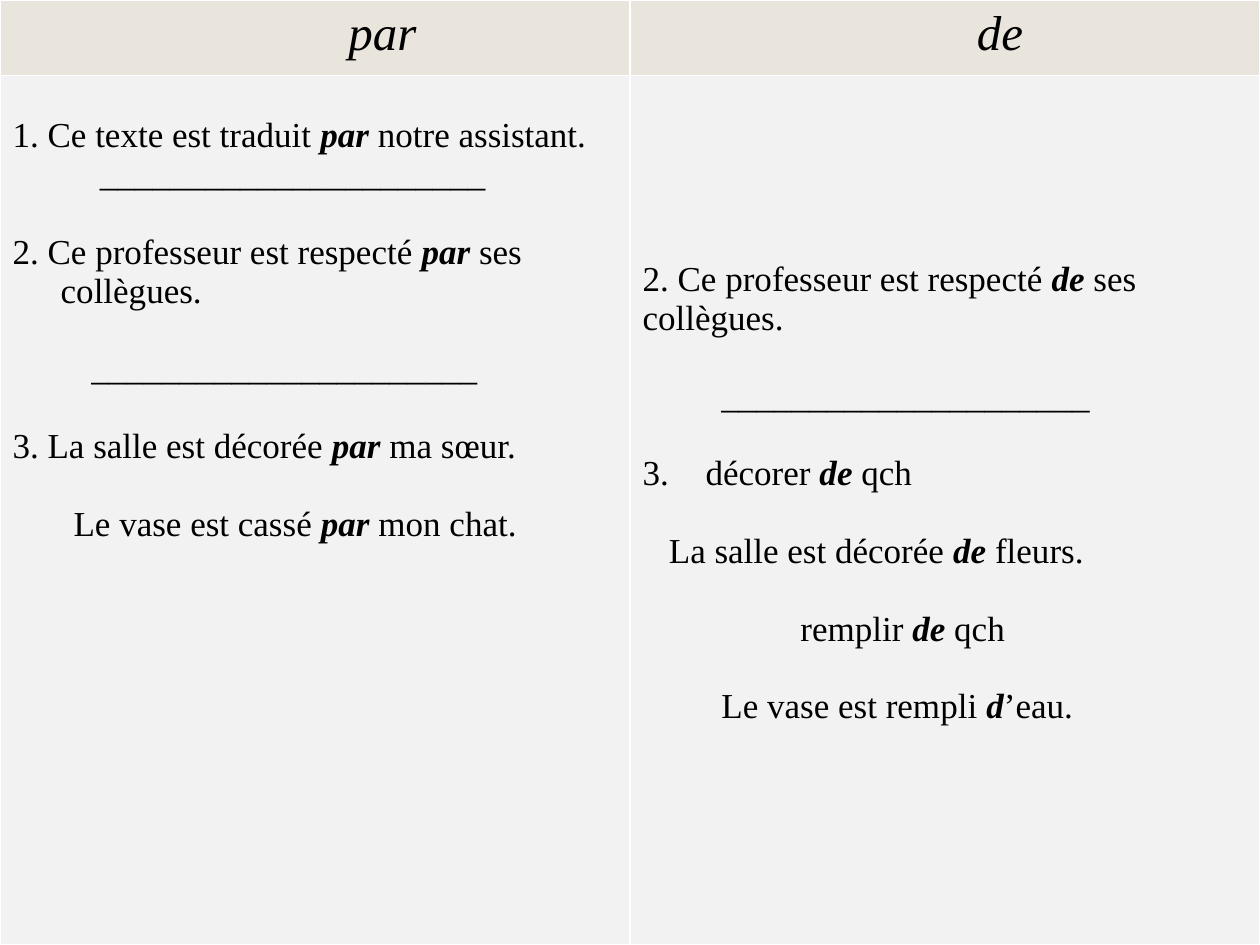
from dataclasses import dataclass

from lxml.etree import SubElement
from pptx import Presentation
from pptx.dml.color import RGBColor
from pptx.enum.text import MSO_ANCHOR, PP_ALIGN
from pptx.oxml.ns import qn
from pptx.util import Cm, Pt


@dataclass(frozen=True)
class Theme:
    font: str = "Times New Roman"
    text: str = "000000"
    header: str = "E9E5DC"
    body: str = "F2F2F2"
    border: str = "FFFFFF"
    border_width: float = 1
    header_size: float = 28
    body_size: float = 20
    gap: float = 22.2  # one line of body text


THEME = Theme()
HANG = 0.97  # hanging indent of the numbered sentences, cm

# Each line: left margin and first-line indent in cm, gap before, runs.
# Runs alternate between plain and emphasised text.
PAR_LINES = [
    (HANG, -HANG, False, ["1. Ce texte est traduit ", "par ", "notre assistant."]),
    (1.76, 0, False, ["_" * 22]),
    (HANG, -HANG, True, ["2. Ce professeur est respecté ", "par ", "ses collègues."]),
    (1.59, 0, True, ["_" * 22]),
    (HANG, -HANG, True, ["3. La salle est décorée ", "par ", "ma sœur."]),
    (1.23, 0, True, ["Le vase est cassé ", "par", " mon chat."]),
]
DE_LINES = [
    (0, 0, False, ["2. Ce professeur est respecté ", "de", " ses collègues."]),
    (1.59, 0, True, ["_" * 21]),
    (0, 0, True, ["3.\tdécorer ", "de ", "qch"]),
    (0.53, 0, True, ["La salle est décorée ", "de ", "fleurs."]),
    (3.18, 0, True, ["remplir ", "de ", "qch"]),
    (1.59, 0, True, ["Le vase est rempli ", "d", "’eau."]),
]


def add_run(p, text, size, bold=False, italic=False):
    r = p.add_run()
    r.text = text
    r.font.name, r.font.size = THEME.font, Pt(size)
    r.font.bold, r.font.italic = bold, italic
    r.font.color.rgb = RGBColor.from_string(THEME.text)


def set_indent(p, left, first=0):
    ppr = p._p.get_or_add_pPr()
    ppr.set("marL", str(Cm(left)))
    ppr.set("indent", str(Cm(first)))


def add_tab_stop(p, pos):
    tabs = SubElement(p._p.get_or_add_pPr(), qn("a:tabLst"))
    SubElement(tabs, qn("a:tab"), pos=str(Cm(pos)), algn="l")


def style_cell(cell, color):
    # Borders come before the fill in the cell properties
    tcpr = cell._tc.get_or_add_tcPr()
    for side in ("lnL", "lnR", "lnT", "lnB"):
        ln = SubElement(tcpr, qn(f"a:{side}"), w=str(Pt(THEME.border_width)))
        fill = SubElement(ln, qn("a:solidFill"))
        SubElement(fill, qn("a:srgbClr"), val=THEME.border)
    cell.fill.solid()
    cell.fill.fore_color.rgb = RGBColor.from_string(color)
    cell.vertical_anchor = MSO_ANCHOR.TOP


def fill_header(cell, word, shift):
    style_cell(cell, THEME.header)
    p = cell.text_frame.paragraphs[0]
    p.alignment = PP_ALIGN.CENTER
    set_indent(p, shift)
    add_run(p, word, THEME.header_size, italic=True)


def fill_examples(cell, lines, top):
    style_cell(cell, THEME.body)
    cell.margin_top = Cm(top)
    tf = cell.text_frame
    for i, (left, first, gap, runs) in enumerate(lines):
        p = tf.add_paragraph() if i else tf.paragraphs[0]
        set_indent(p, left, first)
        p.space_before = Pt(THEME.gap if gap else 0)
        if "\t" in runs[0]:
            add_tab_stop(p, 3.18)
        for j, text in enumerate(runs):
            strong = j % 2 == 1
            add_run(p, text, THEME.body_size, bold=strong, italic=strong)


def add_comparison(s, left, top, width, height):
    header_height = Cm(1.52)
    table = s.shapes.add_table(2, 2, left, top, width, height).table
    table.first_row = table.horz_banding = False
    table.rows[0].height = header_height
    table.rows[1].height = height - header_height
    columns = [("par", 2.72, PAR_LINES, 0.83), ("de", 2.22, DE_LINES, 3.73)]
    for c, (word, shift, lines, margin) in enumerate(columns):
        fill_header(table.cell(0, c), word, shift)
        fill_examples(table.cell(1, c), lines, margin)


def main():
    prs = Presentation()
    prs.slide_width, prs.slide_height = Cm(25.4), Cm(19.05)
    s = prs.slides.add_slide(prs.slide_layouts[6])
    add_comparison(s, 0, 0, prs.slide_width, prs.slide_height)
    prs.save("out.pptx")


if __name__ == "__main__":
    main()
